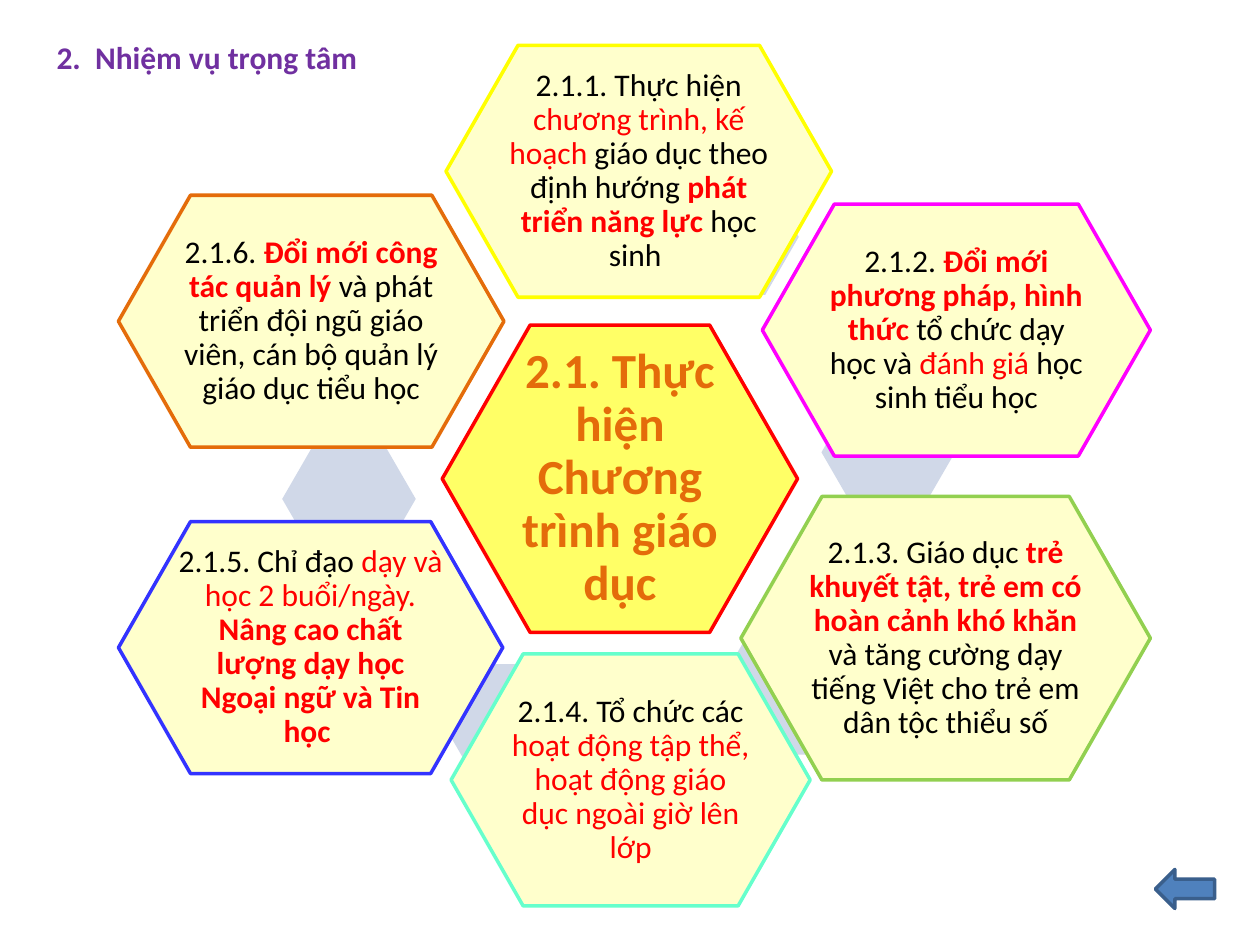
from pptx import Presentation
from pptx.dml.color import RGBColor
from pptx.enum.shapes import MSO_SHAPE
from pptx.enum.text import MSO_ANCHOR, MSO_AUTO_SIZE, PP_ALIGN
from pptx.util import Inches, Pt

FONT = "Calibri"
BLACK = RGBColor(0x00, 0x00, 0x00)
RED = RGBColor(0xFF, 0x00, 0x00)
ORANGE = RGBColor(0xE4, 0x6C, 0x0A)
PURPLE = RGBColor(0x70, 0x30, 0xA0)
YELLOW = RGBColor(0xFF, 0xFF, 0x00)
LEMON = RGBColor(0xFF, 0xFF, 0x66)
CREAM = RGBColor(0xFF, 0xFF, 0xCC)
MAGENTA = RGBColor(0xFF, 0x00, 0xFF)
GREEN = RGBColor(0x92, 0xD0, 0x50)
MINT = RGBColor(0x66, 0xFF, 0xCC)
BLUE = RGBColor(0x33, 0x33, 0xFF)
PALE_BLUE = RGBColor(0xD0, 0xD8, 0xE8)
ARROW_FILL = RGBColor(0x4F, 0x81, 0xBD)
ARROW_LINE = RGBColor(0x3A, 0x5F, 0x8C)

PLAIN = (BLACK, False)
ACCENT = (RED, False)
STRONG = (RED, True)

CENTER_TASK = [("2.1. Thực hiện Chương trình giáo dục", (ORANGE, True))]

TASKS = [
    ((3.54, 0.36, 3.06, 2), YELLOW, (5.28, 1.42), [
        ("2.1.1. Thực hiện ", PLAIN),
        ("chương trình, kế hoạch ", ACCENT),
        ("giáo dục theo định hướng ", PLAIN),
        ("phát triển năng lực ", STRONG),
        ("học sinh ", PLAIN)]),
    ((6.05, 1.62, 3.08, 2), MAGENTA, (6.52, 3.13), [
        ("2.1.2. ", PLAIN),
        ("Đổi mới phương pháp, hình thức ", STRONG),
        ("tổ chức dạy học và ", PLAIN),
        ("đánh giá ", ACCENT),
        ("học sinh tiểu học", PLAIN)]),
    ((5.88, 3.94, 3.25, 2.25), GREEN, (5.65, 5.07), [
        ("2.1.3. Giáo dục ", PLAIN),
        ("trẻ khuyết tật, trẻ em có hoàn cảnh khó khăn ", STRONG),
        ("và tăng cường dạy tiếng Việt cho trẻ em dân tộc thiểu số", PLAIN)]),
    ((3.58, 5.19, 2.85, 2), MINT, (3.51, 5.27), [
        ("2.1.4. Tổ chức các ", PLAIN),
        ("hoạt động tập thể, hoạt động giáo dục ngoài giờ lên lớp", ACCENT)]),
    ((0.94, 4.14, 3.05, 2), BLUE, (2.24, 3.5), [
        ("2.1.5. Chỉ đạo ", PLAIN),
        ("dạy và học 2 buổi/ngày. ", ACCENT),
        ("Nâng cao chất lượng dạy học Ngoại ngữ và Tin học ", STRONG)]),
    ((0.94, 1.55, 3.06, 2), ORANGE, None, [
        ("2.1.6. ", PLAIN),
        ("Đổi mới công tác quản lý ", STRONG),
        ("và phát triển đội ngũ giáo viên, cán bộ quản lý giáo dục tiểu học", PLAIN)]),
]


def add_spans(paragraph, spans, size):
    for text, (color, bold) in spans:
        span = paragraph.add_run()
        span.text = text
        span.font.name = FONT
        span.font.size = Pt(size)
        span.font.bold = bold
        span.font.color.rgb = color


def add_figure(page, kind, place, fill, line=None):
    figure = page.shapes.add_shape(kind, *map(Inches, place))
    figure.shadow.inherit = False
    figure.fill.solid()
    figure.fill.fore_color.rgb = fill
    if line is None:
        figure.line.fill.background()
    else:
        figure.line.color.rgb = line
        figure.line.width = Pt(2)
    return figure


def add_link_hexagon(page, corner):
    link = add_figure(page, MSO_SHAPE.HEXAGON, (*corner, 1.06, 0.92), PALE_BLUE)
    link.adjustments[0] = 0.289


def add_task_hexagon(page, place, fill, line, spans, size=18, inset=0.03):
    hexagon = add_figure(page, MSO_SHAPE.HEXAGON, place, fill, line)
    hexagon.adjustments[0] = 0.286
    frame = hexagon.text_frame
    frame.word_wrap = True
    frame.vertical_anchor = MSO_ANCHOR.MIDDLE
    frame.margin_left = frame.margin_right = Inches(inset)
    frame.margin_top = frame.margin_bottom = Inches(inset)
    paragraph = frame.paragraphs[0]
    paragraph.alignment = PP_ALIGN.CENTER
    paragraph.line_spacing = 0.9
    add_spans(paragraph, spans, size)


def add_heading(page, text):
    box = page.shapes.add_textbox(Inches(0.35), Inches(0.25), Inches(3.08), Inches(0.4))
    frame = box.text_frame
    frame.word_wrap = False
    frame.auto_size = MSO_AUTO_SIZE.SHAPE_TO_FIT_TEXT
    add_spans(frame.paragraphs[0], [(text, (PURPLE, True))], 18)


def main():
    deck = Presentation()
    deck.slide_width = Inches(10)
    deck.slide_height = Inches(7.5)
    page = deck.slides.add_slide(deck.slide_layouts[6])

    add_figure(page, MSO_SHAPE.LEFT_ARROW, (9.17, 6.9, 0.47, 0.31), ARROW_FILL, ARROW_LINE)
    add_heading(page, "2.  Nhiệm vụ trọng tâm")
    add_task_hexagon(page, (3.51, 2.58, 2.82, 2.44), LEMON, RED, CENTER_TASK, 28, 0.04)
    for place, line, link_corner, spans in TASKS:
        if link_corner:
            add_link_hexagon(page, link_corner)
        add_task_hexagon(page, place, CREAM, line, spans)

    deck.save("out.pptx")


if __name__ == "__main__":
    main()
